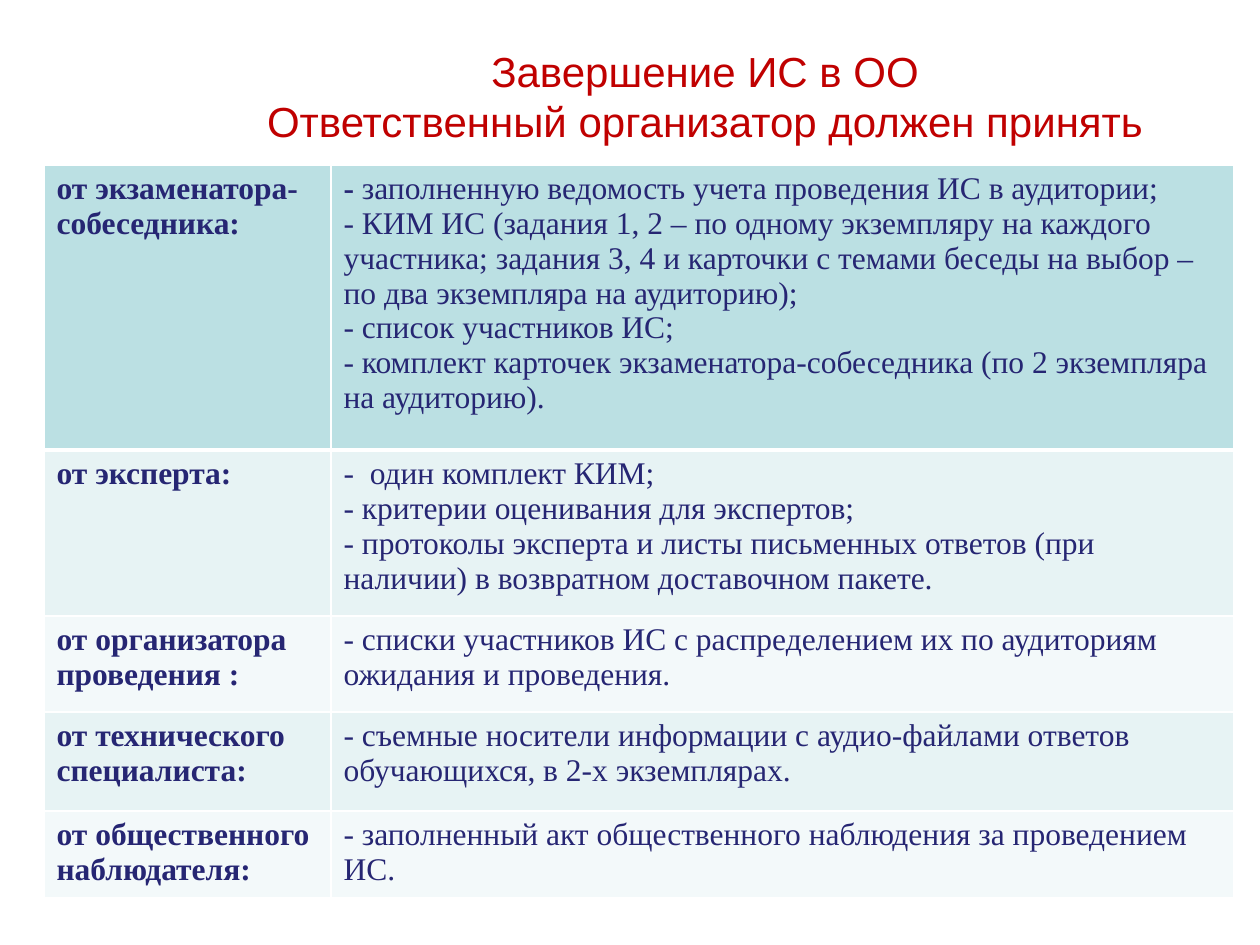
from lxml.etree import SubElement
from pptx import Presentation
from pptx.dml.color import RGBColor
from pptx.enum.text import MSO_ANCHOR, MSO_AUTO_SIZE, PP_ALIGN
from pptx.oxml.ns import qn
from pptx.util import Emu, Pt

PX = 914400 // 126
COLORS = {
    "title": "C00000",
    "text": "262673",
    "header": "BBE0E3",
    "band_dark": "E7F3F4",
    "band_light": "F3F9FA",
    "border": "FFFFFF",
}
COLUMN_WIDTHS = [287, 903]
ROW_HEIGHTS = [285, 166, 96, 99, 87]
ROWS = [
    ("от экзаменатора-собеседника:", [
        "- заполненную ведомость учета проведения ИС в аудитории;",
        "- КИМ ИС (задания 1, 2 – по одному экземпляру на каждого участника; "
        "задания 3, 4 и карточки с темами беседы на выбор – по два экземпляра на аудиторию);",
        "- список участников ИС;",
        "- комплект карточек экзаменатора-собеседника (по 2 экземпляра на аудиторию).",
    ]),
    ("от эксперта:", [
        "-  один комплект КИМ;",
        "- критерии оценивания для экспертов;",
        "- протоколы эксперта и листы письменных ответов (при наличии) "
        "в возвратном доставочном пакете.",
    ]),
    ("от организатора проведения :", [
        "- списки участников ИС с распределением их по аудиториям ожидания и проведения.",
    ]),
    ("от технического специалиста:", [
        "- съемные носители информации с аудио-файлами ответов обучающихся, в 2-х экземплярах.",
    ]),
    ("от общественного наблюдателя:", [
        "- заполненный акт общественного наблюдения за проведением ИС.",
    ]),
]


def px(value):
    return Emu(value * PX)


def rgb(name):
    return RGBColor.from_string(COLORS[name])


def format_run(run, font, size, color, bold):
    run.font.name = font
    run.font.size = Pt(size)
    run.font.bold = bold
    run.font.color.rgb = rgb(color)


def write_text(frame, text, font="Times New Roman", size=18, color="text",
               bold=False, align=PP_ALIGN.LEFT, bold_dash=False):
    frame.text = text
    for paragraph in frame.paragraphs:
        paragraph.alignment = align
        for run in paragraph.runs:
            format_run(run, font, size, color, bold)
    if bold_dash:
        dash = frame.paragraphs[0].runs[0]
        rest = frame.paragraphs[0].add_run()
        rest.text = dash.text[2:]
        dash.text = dash.text[:2]
        dash.font.bold = True
        format_run(rest, font, size, color, bold)


def add_title(slide):
    title = slide.shapes.title
    title.left, title.top, title.width, title.height = map(px, (213, 26, 984, 139))
    frame = title.text_frame
    frame.word_wrap = True
    frame.auto_size = MSO_AUTO_SIZE.NONE
    frame.vertical_anchor = MSO_ANCHOR.MIDDLE
    write_text(frame, "Завершение ИС в ОО\vОтветственный организатор должен принять",
               font="Arial", size=24, color="title", align=PP_ALIGN.CENTER)


def set_borders(cell, top=1, bottom=1):
    properties = cell._tc.get_or_add_tcPr()
    for side, width in (("L", 1), ("R", 1), ("T", top), ("B", bottom)):
        line = SubElement(properties, qn(f"a:ln{side}"), w=str(Pt(width)))
        fill = SubElement(line, qn("a:solidFill"))
        SubElement(fill, qn("a:srgbClr"), val=COLORS["border"])


def style_cell(cell, row_index):
    set_borders(cell, top=3 if row_index == 1 else 1, bottom=3 if row_index == 0 else 1)
    band = "band_dark" if row_index % 2 else "band_light"
    cell.fill.solid()
    cell.fill.fore_color.rgb = rgb("header" if row_index == 0 else band)


def add_handover_table(slide):
    frame = slide.shapes.add_table(len(ROWS), len(COLUMN_WIDTHS), px(44), px(165),
                                   px(sum(COLUMN_WIDTHS)), px(sum(ROW_HEIGHTS)))
    table = frame.table
    for column, width in zip(table.columns, COLUMN_WIDTHS):
        column.width = px(width)
    for index, (person, materials) in enumerate(ROWS):
        table.rows[index].height = px(ROW_HEIGHTS[index])
        person_cell, materials_cell = table.rows[index].cells
        write_text(person_cell.text_frame, person, bold=True)
        write_text(materials_cell.text_frame, "\n".join(materials), bold_dash=index == 0)
        for cell in (person_cell, materials_cell):
            style_cell(cell, index)


def main():
    presentation = Presentation()
    presentation.slide_width, presentation.slide_height = px(1260), px(945)
    slide = presentation.slides.add_slide(presentation.slide_layouts[5])
    add_title(slide)
    add_handover_table(slide)
    presentation.save("out.pptx")


if __name__ == "__main__":
    main()
